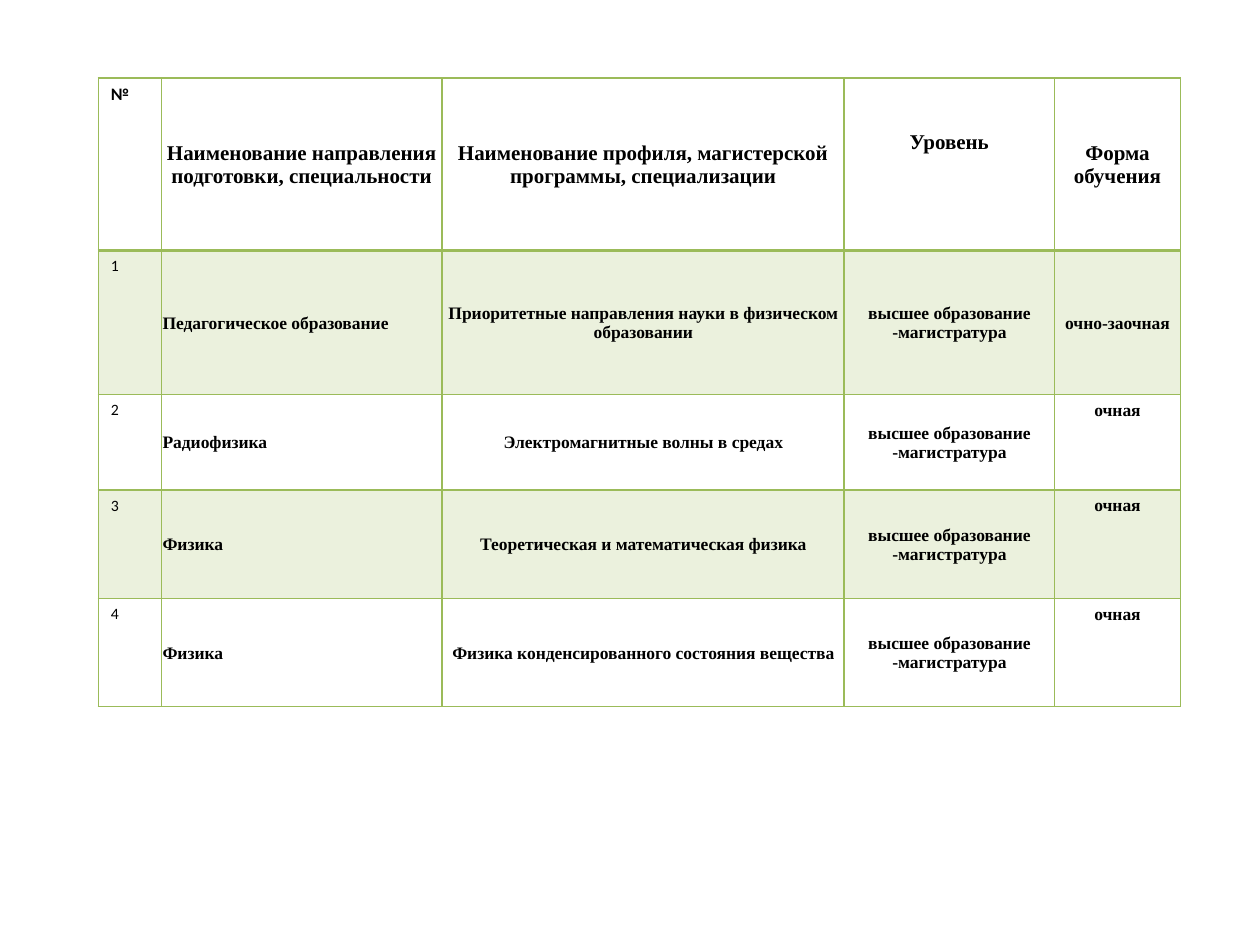
from lxml.etree import SubElement
from pptx import Presentation
from pptx.dml.color import RGBColor
from pptx.enum.text import MSO_ANCHOR, PP_ALIGN
from pptx.oxml.ns import qn
from pptx.util import Inches, Pt

GREEN = "9BBB59"
BLACK = "000000"
LEVEL = "высшее образование -магистратура"
COLUMN_WIDTHS = [0.5, 2.23, 3.19, 1.67, 1]
ROW_HEIGHTS = [1.37, 1.14, 0.76, 0.86, 0.86]
ROWS = [
    ["№", "Наименование направления подготовки, специальности",
     "Наименование профиля, магистерской программы, специализации",
     "Уровень", "Форма обучения"],
    ["1", "Педагогическое образование",
     "Приоритетные направления науки в физическом образовании",
     LEVEL, "очно-заочная"],
    ["2", "Радиофизика", "Электромагнитные волны в средах", LEVEL, "очная"],
    ["3", "Физика", "Теоретическая и математическая физика", LEVEL, "очная"],
    ["4", "Физика", "Физика конденсированного состояния вещества", LEVEL, "очная"],
]


def color(value):
    return RGBColor.from_string(value)


def set_borders(cell, bottom_width):
    properties = cell._tc.get_or_add_tcPr()
    for side, width in (("L", 1), ("R", 1), ("T", 1), ("B", bottom_width)):
        line = SubElement(properties, qn(f"a:ln{side}"), w=str(Pt(width)))
        fill = SubElement(line, qn("a:solidFill"))
        SubElement(fill, qn("a:srgbClr"), val=GREEN)


def set_fill(cell, shaded):
    if not shaded:
        cell.fill.background()
        return
    cell.fill.solid()
    cell.fill.fore_color.rgb = color(GREEN)
    fill_color = cell._tc.tcPr.find(qn("a:solidFill")).find(qn("a:srgbClr"))
    SubElement(fill_color, qn("a:alpha"), val="20000")


def set_text(cell, text, font_name, size, bold, alignment):
    cell.text_frame.text = text
    paragraph = cell.text_frame.paragraphs[0]
    paragraph.alignment = alignment
    font = paragraph.runs[0].font
    font.name = font_name
    font.size = Pt(size)
    font.bold = bold
    font.color.rgb = color(BLACK)


def center_vertically(cell):
    cell.vertical_anchor = MSO_ANCHOR.MIDDLE
    cell.margin_left = cell.margin_right = cell.margin_top = Inches(0.01)
    cell.margin_bottom = 0


def format_cell(cell, text, row, column):
    header = row == 0
    if column == 0:
        set_text(cell, text, "Calibri", 10 if header else 9, header, PP_ALIGN.LEFT)
    else:
        left = column == 1 and not header
        alignment = PP_ALIGN.LEFT if left else PP_ALIGN.CENTER
        set_text(cell, text, "Times New Roman", 12 if header else 10, True, alignment)
    if text == "Уровень":
        cell.margin_top = Inches(0.42)
    elif column > 0 and text != "очная":
        center_vertically(cell)
    set_borders(cell, 2 if header else 1)
    set_fill(cell, row % 2 == 1)


def add_programme_table(slide):
    frame = slide.shapes.add_table(
        len(ROWS), len(COLUMN_WIDTHS), Inches(0.78), Inches(0.62),
        Inches(sum(COLUMN_WIDTHS)), Inches(sum(ROW_HEIGHTS)))
    table = frame.table
    table.first_row = False
    table.horz_banding = False
    for column, width in zip(table.columns, COLUMN_WIDTHS):
        column.width = Inches(width)
    for row, height in zip(table.rows, ROW_HEIGHTS):
        row.height = Inches(height)
    for row, texts in enumerate(ROWS):
        for column, text in enumerate(texts):
            format_cell(table.cell(row, column), text, row, column)


def main():
    presentation = Presentation()
    presentation.slide_width = Inches(10)
    presentation.slide_height = Inches(7.5)
    slide = presentation.slides.add_slide(presentation.slide_layouts[6])
    add_programme_table(slide)
    presentation.save("out.pptx")


if __name__ == "__main__":
    main()
